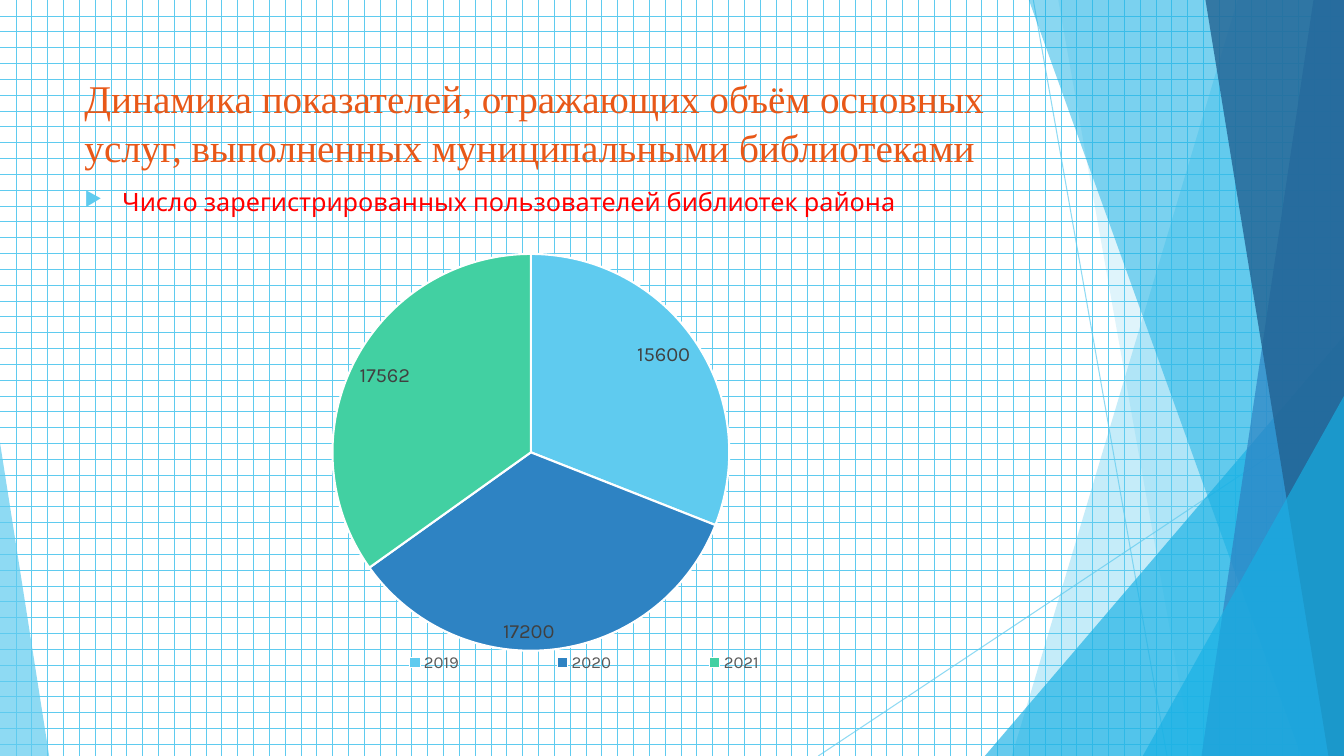
import pptx
import pptx.chart.data
import pptx.dml.color
import pptx.enum.chart
import pptx.enum.dml
import pptx.enum.shapes
import pptx.oxml
import pptx.oxml.ns
import pptx.util
from pptx.util import Cm

WIDTH, HEIGHT = 33.87, 19.05
SKY, AZURE, BLUE, NAVY, GREEN = "5FCBEF", "17B0E4", "2E83C3", "226292", "42D0A2"


def color(value):
    return pptx.dml.color.RGBColor.from_string(value)


def add_child(parent, tag, **attributes):
    child = pptx.oxml.parse_xml(f"<{tag} {pptx.oxml.ns.nsdecls(tag.split(':')[0])}/>")
    for name, value in attributes.items():
        child.set(name, str(value))
    parent.append(child)
    return child


def set_opacity(shape, percent):
    for fill_color in shape._element.spPr.iter(pptx.oxml.ns.qn("a:srgbClr")):
        add_child(fill_color, "a:alpha", val=percent * 1000)


def paint(shape, fill, opacity):
    shape.shadow.inherit = False
    shape.fill.solid()
    shape.fill.fore_color.rgb = color(fill)
    shape.line.fill.background()
    set_opacity(shape, opacity)


def add_band(slide, top_x, bottom_x, fill, opacity):
    builder = slide.shapes.build_freeform(Cm(top_x), 0)
    corners = [(WIDTH, 0), (WIDTH, HEIGHT), (bottom_x, HEIGHT)]
    builder.add_line_segments([(Cm(x), Cm(y)) for x, y in corners], close=True)
    paint(builder.convert_to_shape(), fill, opacity)


def add_triangle(slide, left, top, width, apex, fill, opacity):
    shape = slide.shapes.add_shape(
        pptx.enum.shapes.MSO_SHAPE.ISOSCELES_TRIANGLE,
        Cm(left), Cm(top), Cm(width), Cm(HEIGHT - top))
    shape.adjustments[0] = apex
    paint(shape, fill, opacity)


def add_thin_line(slide, start_x, start_y, end_x, end_y):
    connector = slide.shapes.add_connector(
        pptx.enum.shapes.MSO_CONNECTOR.STRAIGHT,
        Cm(start_x), Cm(start_y), Cm(end_x), Cm(end_y))
    connector.line.color.rgb = color(SKY)
    connector.line.width = pptx.util.Pt(0.75)
    set_opacity(connector, 70)
    add_child(connector._element.spPr, "a:effectLst")


def style_font(font, name, size, value):
    font.name = name
    font.size = pptx.util.Pt(size)
    font.color.rgb = color(value)


def add_text(slide, top, height, text, name, size, value):
    box = slide.shapes.add_textbox(Cm(1.88), Cm(top), Cm(23.88), Cm(height))
    box.text_frame.word_wrap = True
    paragraph = box.text_frame.paragraphs[0]
    run = paragraph.add_run()
    run.text = text
    style_font(run.font, name, size, value)
    return paragraph


def add_bullet(paragraph):
    properties = paragraph._p.get_or_add_pPr()
    properties.set("marL", str(Cm(0.95)))
    properties.set("indent", str(-Cm(0.95)))
    bullet_color = add_child(properties, "a:buClr")
    add_child(bullet_color, "a:srgbClr", val=SKY)
    add_child(properties, "a:buSzPct", val=80000)
    add_child(properties, "a:buChar", char="▶")


def set_layout(element, x, y, w, h, inner=False):
    layout = element.get_or_add_layout() if hasattr(element, "get_or_add_layout") else element.find(
        pptx.oxml.ns.qn("c:layout"))
    if layout is None:
        layout = add_child(element, "c:layout")
        element.insert(0, layout)
    for child in list(layout):
        layout.remove(child)
    manual = add_child(layout, "c:manualLayout")
    if inner:
        add_child(manual, "c:layoutTarget", val="inner")
    for tag in ("xMode", "yMode"):
        add_child(manual, f"c:{tag}", val="edge")
    for tag, value in (("x", x), ("y", y), ("w", w), ("h", h)):
        add_child(manual, f"c:{tag}", val=value)


def add_users_chart(slide):
    data = pptx.chart.data.CategoryChartData()
    data.categories = ["2019", "2020", "2021"]
    data.add_series("Series 1", [15600, 17200, 17562])
    chart = slide.shapes.add_chart(
        pptx.enum.chart.XL_CHART_TYPE.PIE,
        Cm(4.39), Cm(6.05), Cm(17.98), Cm(11.63), data).chart
    style_font(chart.font, "Karla", 10, "000000")
    chart.has_title = False
    chart.has_legend = True
    chart.legend.position = pptx.enum.chart.XL_LEGEND_POSITION.BOTTOM
    chart.legend.include_in_layout = False
    style_font(chart.legend.font, "Karla", 12, "595959")

    plot = chart.plots[0]
    plot.vary_by_categories = True
    for index, fill in enumerate((SKY, BLUE, GREEN)):
        slice_format = plot.series[0].points[index].format
        slice_format.fill.solid()
        slice_format.fill.fore_color.rgb = color(fill)
        slice_format.line.color.rgb = color("FFFFFF")
        slice_format.line.width = pptx.util.Pt(1.5)
    labels = plot.series[0].data_labels
    labels.show_value = True
    labels.position = pptx.enum.chart.XL_LABEL_POSITION.INSIDE_END
    style_font(labels.font, "Karla", 14.4, "404040")

    set_layout(chart._chartSpace.chart.plotArea, 0.22, 0.03, 0.56, 0.86, inner=True)
    set_layout(chart.legend._element, 0.2, 0.88, 0.75, 0.07)


def add_background(slide):
    fill = slide.background.fill
    fill.patterned()
    fill.pattern = pptx.enum.dml.MSO_PATTERN.DOTTED_GRID
    fill.fore_color.rgb = color(SKY)
    fill.back_color.rgb = color("FFFFFF")


def add_decoration(slide):
    add_thin_line(slide, 26.04, 0, 29.41, HEIGHT)
    add_thin_line(slide, WIDTH, 10.24, 20.62, HEIGHT)
    add_band(slide, 31.19, 25.5, SKY, 36)
    add_band(slide, 26.67, 30.05, SKY, 20)
    add_triangle(slide, 24.82, 8.46, 9.05, 1, AZURE, 66)
    add_band(slide, 25.93, 32.79, AZURE, 50)
    add_band(slide, 33.1, 30.28, BLUE, 70)
    add_band(slide, 30.38, 33.48, NAVY, 80)
    add_triangle(slide, 28.8, 9.98, 5.07, 1, AZURE, 66)
    add_triangle(slide, 0, 11.15, 1.24, 0, SKY, 70)


def main():
    presentation = pptx.Presentation()
    presentation.slide_width = Cm(WIDTH)
    presentation.slide_height = Cm(HEIGHT)
    slide = presentation.slides.add_slide(presentation.slide_layouts[6])
    add_background(slide)
    add_decoration(slide)
    title = add_text(
        slide, 1.7, 3.3,
        "Динамика показателей, отражающих объём основных услуг, "
        "выполненных муниципальными библиотеками",
        "Times New Roman", 28, "E85818")
    title.line_spacing = 1.04
    subtitle = add_text(
        slide, 4.57, 12.19,
        "Число зарегистрированных пользователей библиотек района",
        "Karla", 18, "FF0000")
    subtitle.space_before = pptx.util.Pt(10)
    add_bullet(subtitle)
    add_users_chart(slide)
    presentation.save("out.pptx")


if __name__ == "__main__":
    main()
